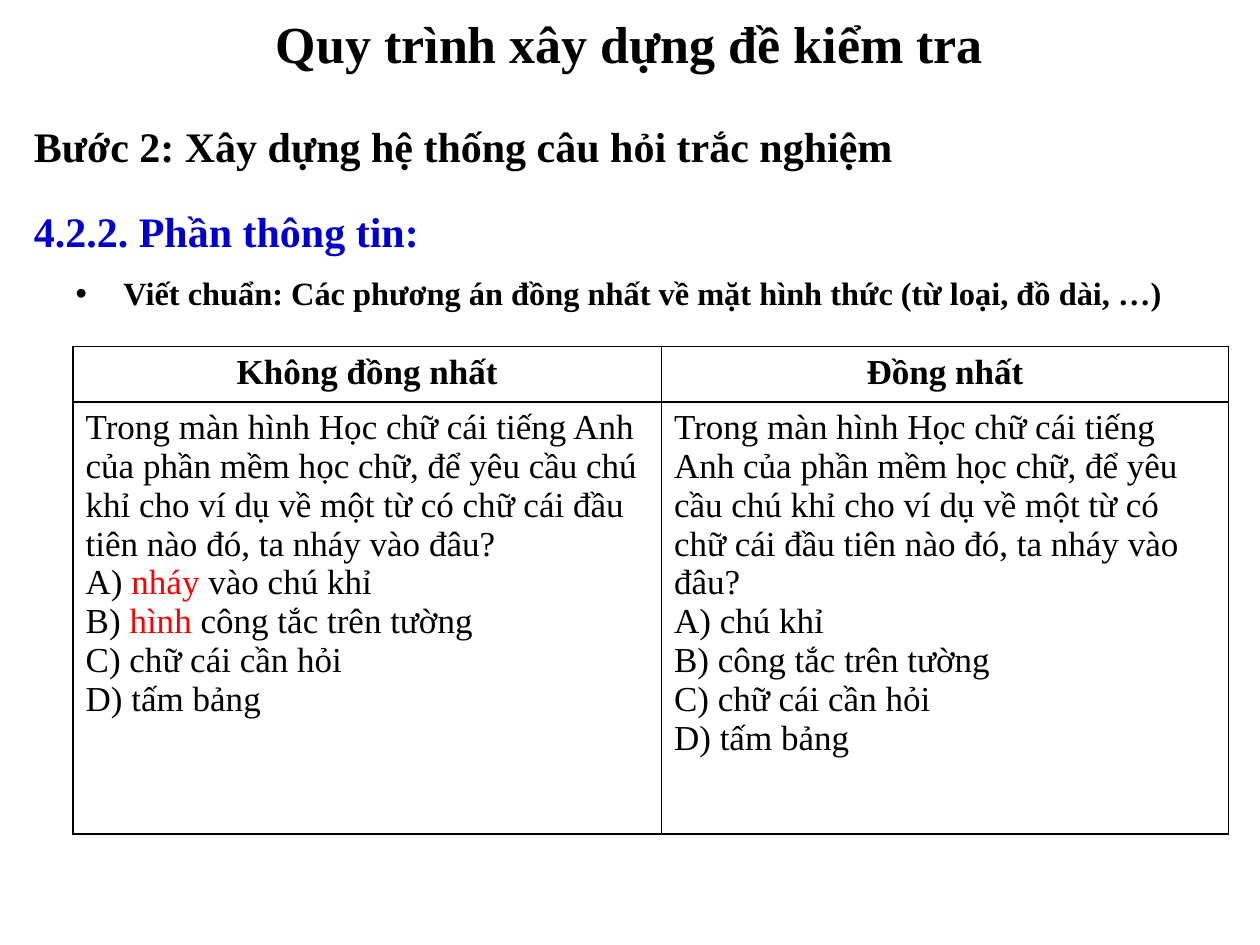
from lxml import etree
from pptx import Presentation
from pptx.dml.color import RGBColor
from pptx.enum.text import MSO_ANCHOR, MSO_AUTO_SIZE, PP_ALIGN
from pptx.oxml.ns import qn
from pptx.util import Inches, Pt

CENTER, JUSTIFY, LEFT = PP_ALIGN.CENTER, PP_ALIGN.JUSTIFY, PP_ALIGN.LEFT
TOP, MIDDLE = MSO_ANCHOR.TOP, MSO_ANCHOR.MIDDLE
NO_AUTOFIT = MSO_AUTO_SIZE.NONE
FONT = "Times New Roman"
BLACK, BLUE, RED, WHITE = "000000", "0000CC", "FF0000", "FFFFFF"

QUESTION = ("Trong màn hình Học chữ cái tiếng Anh của phần mềm học chữ, "
            "để yêu cầu chú khỉ cho ví dụ về một từ có chữ cái đầu tiên nào đó, "
            "ta nháy vào đâu?")
HEADINGS = ["Không đồng nhất", "Đồng nhất"]
# Each answer is a list of (text, colour) runs.
UNEVEN_ANSWERS = [
    [("A) ", BLACK), ("nháy ", RED), ("vào chú khỉ", BLACK)],
    [("B) ", BLACK), ("hình ", RED), ("công tắc trên tường", BLACK)],
    [("C) chữ cái cần hỏi", BLACK)],
    [("D) tấm bảng", BLACK)],
]
EVEN_ANSWERS = [[(text, BLACK)] for text in (
    "A) chú khỉ", "B) công tắc trên tường", "C) chữ cái cần hỏi", "D) tấm bảng")]


def color(hex_value):
    return RGBColor.from_string(hex_value)


def place(shape, box):
    shape.left, shape.top, shape.width, shape.height = (Inches(side) for side in box)


def write_paragraphs(frame, paragraphs, size, bold=False, align=LEFT):
    """Fill a text frame with paragraphs, each a list of (text, colour) runs."""
    for index, runs in enumerate(paragraphs):
        paragraph = frame.add_paragraph() if index else frame.paragraphs[0]
        paragraph.alignment = align
        for text, hex_value in runs:
            run = paragraph.add_run()
            run.text = text
            run.font.name = FONT
            run.font.size = Pt(size)
            run.font.bold = bold
            run.font.color.rgb = color(hex_value)


def add_title(slide, box, text):
    title = slide.shapes.title
    place(title, box)
    frame = title.text_frame
    frame.auto_size = NO_AUTOFIT
    frame.vertical_anchor = MIDDLE
    write_paragraphs(frame, [[(text, BLACK)]], 29.7, True, CENTER)
    frame.paragraphs[0].line_spacing = 0.9


def add_heading(slide, box, text, hex_value):
    heading = slide.shapes.add_textbox(*(Inches(side) for side in box))
    heading.text_frame.word_wrap = True
    write_paragraphs(heading.text_frame, [[(text, hex_value)]], 24, True)


def add_bullet(slide, box, text):
    body = slide.placeholders[1]
    place(body, box)
    frame = body.text_frame
    frame.auto_size = NO_AUTOFIT
    frame.vertical_anchor = TOP
    write_paragraphs(frame, [[(text, BLACK)]], 18.5, True, JUSTIFY)
    paragraph = frame.paragraphs[0]
    paragraph.space_before = Pt(3)
    properties = paragraph._p.get_or_add_pPr()
    properties.set("marL", str(Inches(0.38)))
    properties.set("indent", str(-Inches(0.38)))
    etree.SubElement(properties, qn("a:buChar"), char="•")


def add_borders(cell):
    """Draw all four edges; they must come before the fill in the XML."""
    properties = cell._tc.get_or_add_tcPr()
    for position, edge in enumerate(("a:lnL", "a:lnR", "a:lnT", "a:lnB")):
        line = etree.Element(qn(edge), w=str(Pt(1)))
        fill = etree.SubElement(line, qn("a:solidFill"))
        etree.SubElement(fill, qn("a:srgbClr"), val=BLACK)
        properties.insert(position, line)


def add_comparison(slide, box, column_widths, row_heights):
    sides = [Inches(side) for side in box]
    table = slide.shapes.add_table(2, 2, *sides).table
    for column, width in zip(table.columns, column_widths):
        column.width = Inches(width)
    for row, height in zip(table.rows, row_heights):
        row.height = Inches(height)
    for index, answers in enumerate((UNEVEN_ANSWERS, EVEN_ANSWERS)):
        header, content = table.cell(0, index), table.cell(1, index)
        write_paragraphs(header.text_frame, [[(HEADINGS[index], BLACK)]], 20, True, CENTER)
        write_paragraphs(content.text_frame, [[(QUESTION, BLACK)], *answers], 20)
        for cell in (header, content):
            cell.fill.solid()
            cell.fill.fore_color.rgb = color(WHITE)
            add_borders(cell)


def main():
    presentation = Presentation()
    presentation.slide_width, presentation.slide_height = Inches(10), Inches(7.5)
    slide = presentation.slides.add_slide(presentation.slide_layouts[1])
    add_title(slide, (0.69, 0.08, 8.62, 0.58), "Quy trình xây dựng đề kiểm tra")
    add_heading(slide, (0.17, 0.91, 9.75, 0.5),
                "Bước 2: Xây dựng hệ thống câu hỏi trắc nghiệm", BLACK)
    add_heading(slide, (0.17, 1.58, 9.67, 0.5), "4.2.2. Phần thông tin:", BLUE)
    add_bullet(slide, (0.5, 2.12, 9.22, 0.63),
               "Viết chuẩn: Các phương án đồng nhất về mặt hình thức (từ loại, đồ dài, …)")
    add_comparison(slide, (0.58, 2.75, 9.17, 3.87), (4.67, 4.5), (0.44, 3.43))
    presentation.save("out.pptx")


if __name__ == "__main__":
    main()
